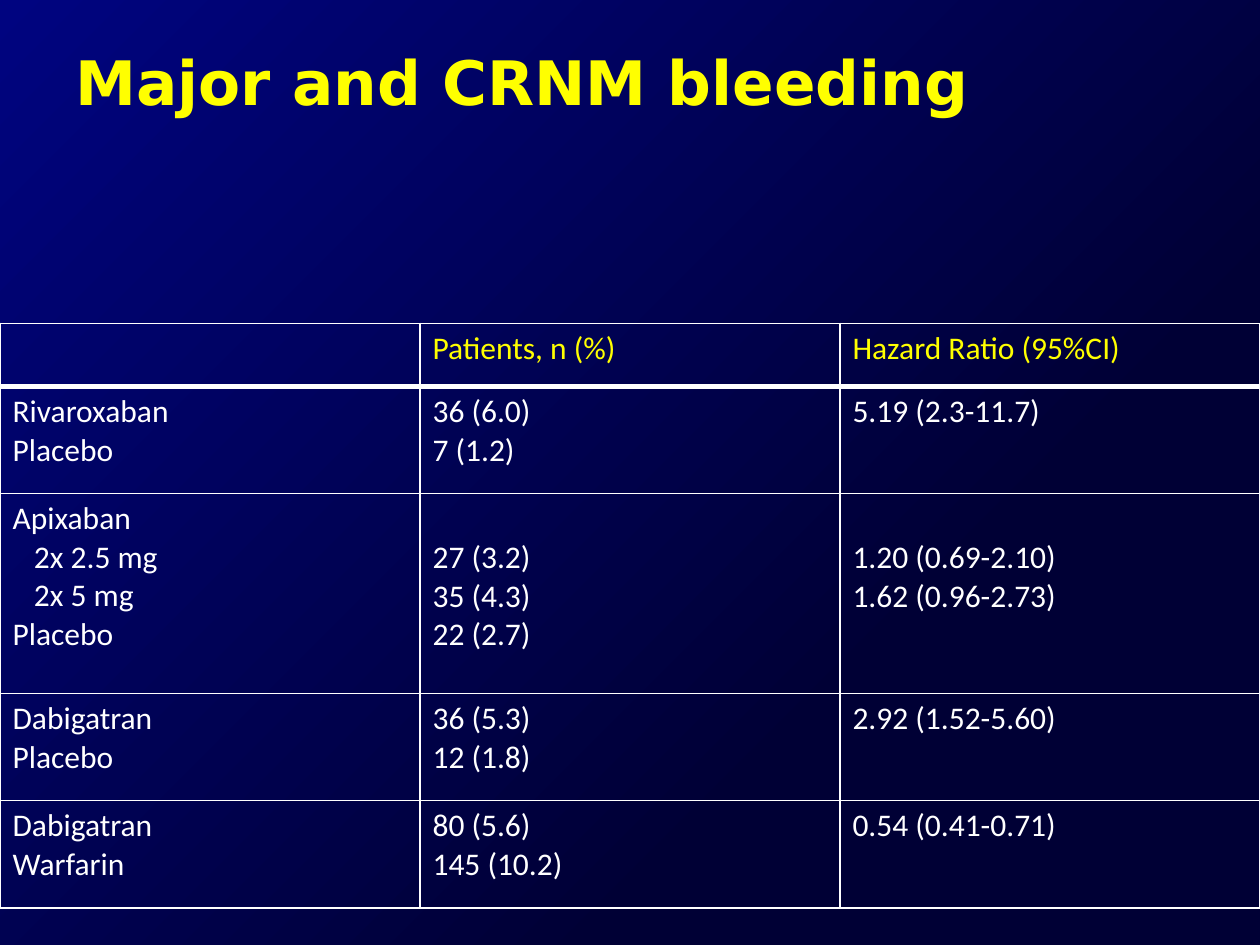
from dataclasses import dataclass

from lxml.etree import SubElement
from pptx import Presentation
from pptx.dml.color import RGBColor
from pptx.enum.shapes import MSO_SHAPE
from pptx.enum.text import MSO_ANCHOR
from pptx.oxml import parse_xml
from pptx.oxml.ns import nsdecls, qn
from pptx.slide import Slide
from pptx.table import _Cell
from pptx.util import Cm, Pt

HUES = {"title": "FFFF00", "text": "FFFFFF", "line": "FFFFFF",
        "dark": "000035", "blue": "000480"}
WIDE, HIGH = Cm(25.4), Cm(19.05)
LINE = Cm(0.78)
DENT = Cm(0.43)


@dataclass
class Row:
    high: float
    cells: tuple[str, str, str]
    hue: str = "text"
    rule: int = 1
    skip: int = 0
    dents: tuple[int, ...] = ()


ROWS = [
    Row(1.27, ("", "Patients, n (%)", "Hazard Ratio (95%CI)"), "title", 3),
    Row(2.16, ("Rivaroxaban\nPlacebo", "36 (6.0)\n7 (1.2)", "5.19 (2.3-11.7)")),
    Row(4.03, ("Apixaban\n2x 2.5 mg\n2x 5 mg\nPlacebo",
               "27 (3.2)\n35 (4.3)\n22 (2.7)",
               "1.20 (0.69-2.10)\n1.62 (0.96-2.73)"), skip=1, dents=(1, 2)),
    Row(2.16, ("Dabigatran\nPlacebo", "36 (5.3)\n12 (1.8)", "2.92 (1.52-5.60)")),
    Row(2.16, ("Dabigatran\nWarfarin", "80 (5.6)\n145 (10.2)", "0.54 (0.41-0.71)")),
]


def add_back(slide: Slide) -> None:
    back = slide.shapes.add_shape(MSO_SHAPE.RECTANGLE, 0, 0, WIDE, HIGH)
    back.shadow.inherit = False
    back.line.fill.background()
    back.fill.gradient()
    grad = back._element.spPr.find(qn("a:gradFill"))
    fade = parse_xml(
        f'<a:gradFill {nsdecls("a")} rotWithShape="1"><a:gsLst>'
        f'<a:gs pos="30000"><a:srgbClr val="{HUES["dark"]}"/></a:gs>'
        f'<a:gs pos="100000"><a:srgbClr val="{HUES["blue"]}"/></a:gs>'
        '</a:gsLst><a:path path="circle">'
        '<a:fillToRect l="100000" t="100000"/></a:path></a:gradFill>')
    grad.getparent().replace(grad, fade)


def add_title(slide: Slide, text: str) -> None:
    frame = slide.shapes.add_textbox(
        Cm(1.27), Cm(0.76), Cm(20.6), Cm(3.18)).text_frame
    frame.word_wrap = True
    frame.vertical_anchor = MSO_ANCHOR.TOP
    frame.text = text
    font = frame.paragraphs[0].runs[0].font
    font.name, font.size, font.bold = "DejaVu Sans", Pt(35), True
    font.color.rgb = RGBColor.from_string(HUES["title"])


def set_edges(cell: _Cell, rule: int) -> None:
    props = cell._tc.get_or_add_tcPr()
    for side, wide in (("L", 1), ("R", 1), ("T", 1), ("B", rule)):
        edge = SubElement(props, qn(f"a:ln{side}"), w=str(Pt(wide)))
        fill = SubElement(edge, qn("a:solidFill"))
        SubElement(fill, qn("a:srgbClr"), val=HUES["line"])
    cell.fill.background()


def fill_cell(cell: _Cell, row: Row, col: int) -> None:
    cell.text_frame.text = row.cells[col]
    if col and row.skip:
        cell.margin_top = Cm(0.13) + row.skip * LINE
    for spot, para in enumerate(cell.text_frame.paragraphs):
        if col == 0 and spot in row.dents:
            para._p.get_or_add_pPr().set("marL", str(DENT))
        para.font.size = Pt(18)
        for run in para.runs:
            run.font.name, run.font.size = "Calibri", Pt(18)
            run.font.bold = False
            run.font.color.rgb = RGBColor.from_string(HUES[row.hue])
    set_edges(cell, row.rule)


def add_grid(slide: Slide, rows: list[Row]) -> None:
    high = Cm(sum(row.high for row in rows))
    grid = slide.shapes.add_table(len(rows), 3, 0, Cm(6.52), WIDE, high).table
    grid.first_row = grid.horz_banding = False
    for spot, row in enumerate(rows):
        grid.rows[spot].height = Cm(row.high)
        for col in range(3):
            fill_cell(grid.cell(spot, col), row, col)


def main() -> None:
    deck = Presentation()
    deck.slide_width, deck.slide_height = WIDE, HIGH
    slide = deck.slides.add_slide(deck.slide_layouts[6])
    add_back(slide)
    add_title(slide, "Major and CRNM bleeding")
    add_grid(slide, ROWS)
    deck.save("out.pptx")


if __name__ == "__main__":
    main()
